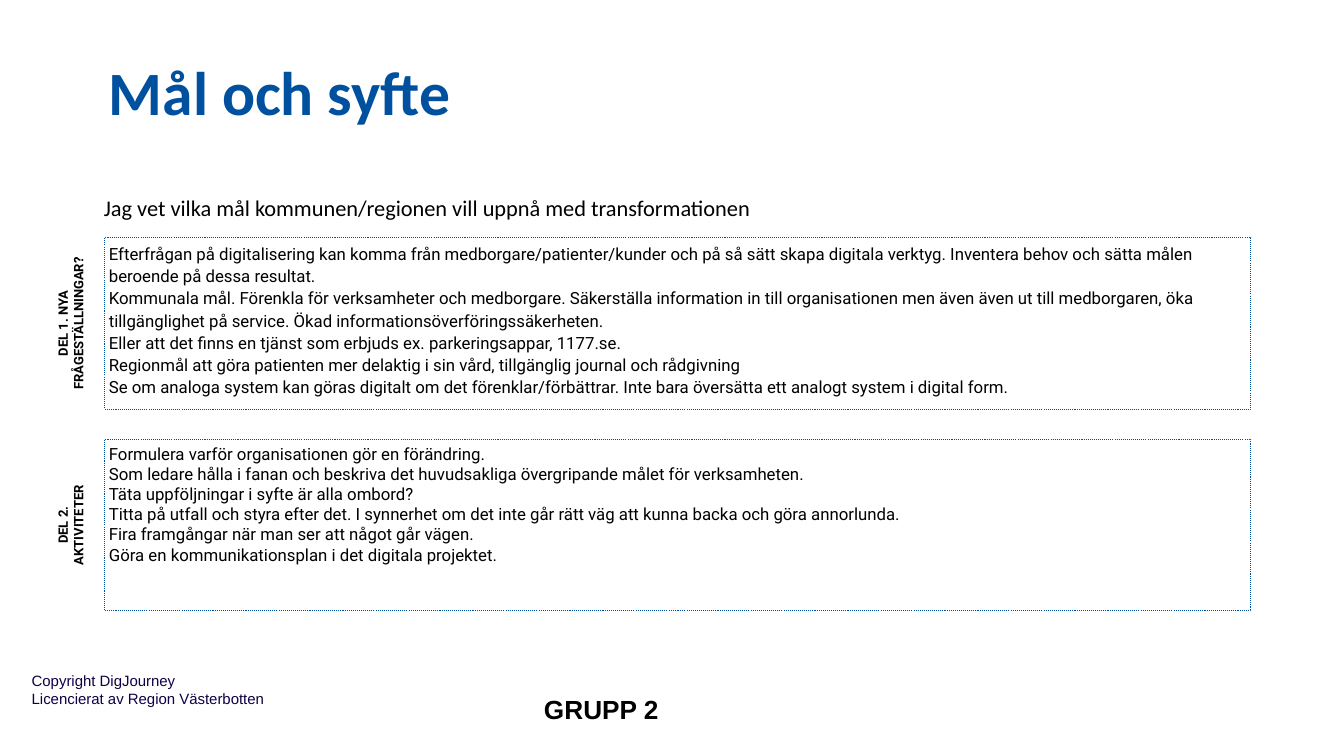
from pptx import Presentation
from pptx.dml.color import RGBColor
from pptx.enum.dml import MSO_LINE
from pptx.enum.shapes import MSO_SHAPE
from pptx.enum.text import MSO_ANCHOR, PP_ALIGN
from pptx.util import Pt

RECTANGLE = MSO_SHAPE.RECTANGLE
DOTTED = MSO_LINE.ROUND_DOT
TOP, BOTTOM = MSO_ANCHOR.TOP, MSO_ANCHOR.BOTTOM
LEFT, CENTER = PP_ALIGN.LEFT, PP_ALIGN.CENTER

COLORS = {"blue": "0050A0", "navy": "110046", "black": "000000"}
NARROW, WIDE = 2.9, 9.6  # text insets
LABEL_HEIGHT = 41.8
LABEL_CENTER = -24.5  # from the left side of the section box

SECTIONS = [
    (["DEL 1. NYA FRÅGESTÄLLNINGAR?"], 1.1, [
        "Efterfrågan på digitalisering kan komma från medborgare/patienter/kunder och på så sätt "
        "skapa digitala verktyg. Inventera behov och sätta målen beroende på dessa resultat.",
        "Kommunala mål. Förenkla för verksamheter och medborgare. Säkerställa information in till "
        "organisationen men även även ut till medborgaren, öka tillgänglighet på service. "
        "Ökad informationsöverföringssäkerheten.",
        "Eller att det finns en tjänst som erbjuds ex. parkeringsappar, 1177.se.",
        "Regionmål att göra patienten mer delaktig i sin vård, tillgänglig journal och rådgivning",
        "Se om analoga system kan göras digitalt om det förenklar/förbättrar. "
        "Inte bara översätta ett analogt system i digital form.",
    ]),
    (["DEL 2.", "AKTIVITETER"], 1.0, [
        "Formulera varför organisationen gör en förändring.",
        "Som ledare hålla i fanan och beskriva det huvudsakliga övergripande målet för verksamheten.",
        "Täta uppföljningar i syfte är alla ombord?",
        "Titta på utfall och styra efter det. I synnerhet om det inte går rätt väg att kunna backa "
        "och göra annorlunda.",
        "Fira framgångar när man ser att något går vägen.",
        "Göra en kommunikationsplan i det digitala projektet.",
    ]),
]


def write_text(shape, lines, *, font, size, color="black", bold=False, align=LEFT,
               anchor=TOP, inset=NARROW, spacing=1.0):
    frame = shape.text_frame
    frame.word_wrap = True
    frame.vertical_anchor = anchor
    frame.margin_left = frame.margin_right = Pt(inset)
    frame.margin_top = frame.margin_bottom = Pt(inset)
    for index, line in enumerate(lines):
        paragraph = frame.add_paragraph() if index else frame.paragraphs[0]
        paragraph.alignment = align
        paragraph.line_spacing = spacing
        run = paragraph.add_run()
        run.text = line
        run.font.name = font
        run.font.size = Pt(size)
        run.font.bold = bold
        run.font.color.rgb = RGBColor.from_string(COLORS[color])


def add_text(slide, box, lines, **text_format):
    shape = slide.shapes.add_textbox(*map(Pt, box))
    write_text(shape, lines, **text_format)
    return shape


def add_heading(slide, box):
    left, top, width, height = box
    title_height = 98
    add_text(slide, (left, top, width, title_height), ["Mål och syfte"],
             font="Calibri", size=44, color="blue", bold=True, anchor=BOTTOM)
    add_text(slide, (left - 3.6, top + title_height, width, height - title_height),
             ["Jag vet vilka mål kommunen/regionen vill uppnå med transformationen"],
             font="Calibri", size=16, anchor=BOTTOM)


def add_section(slide, box, label, spacing, lines):
    left, top, width, height = box
    # Dotted frame with the answers
    frame = slide.shapes.add_shape(RECTANGLE, *map(Pt, box))
    frame.shadow.inherit = False
    frame.fill.background()
    frame.line.color.rgb = RGBColor.from_string(COLORS["blue"])
    frame.line.width = Pt(0.75)
    frame.line.dash_style = DOTTED
    write_text(frame, lines, font="Roboto", size=12, spacing=spacing)

    # Upright label, as long as the frame is high
    label_box = (left + LABEL_CENTER - height / 2, top + (height - LABEL_HEIGHT) / 2,
                 height, LABEL_HEIGHT)
    side_label = add_text(slide, label_box, label, font="Roboto", size=9.3, bold=True,
                          align=CENTER, inset=WIDE)
    side_label.rotation = 270


def add_footer(slide, box):
    left, top, width, height = box
    add_text(slide, (left, top, 315, 45),
             ["Copyright DigJourney", "Licencierat av Region Västerbotten"],
             font="Arial", size=10.7, color="navy", inset=WIDE)
    add_text(slide, (left + 346.3, top + height - 41.8, 140.4, 41.8), ["GRUPP 2"],
             font="Arial", size=18.7, bold=True, align=CENTER, inset=WIDE)


def main():
    presentation = Presentation()
    presentation.slide_width, presentation.slide_height = Pt(960), Pt(540)
    slide = presentation.slides.add_slide(presentation.slide_layouts[6])

    add_heading(slide, (74.9, -3.6, 714, 164.2))
    for index, section in enumerate(SECTIONS):
        add_section(slide, (74.9, 169.9 + index * 144, 818.6, 122.4), *section)
    add_footer(slide, (13, 470.2, 934, 56.9))

    presentation.save("out.pptx")


if __name__ == "__main__":
    main()
